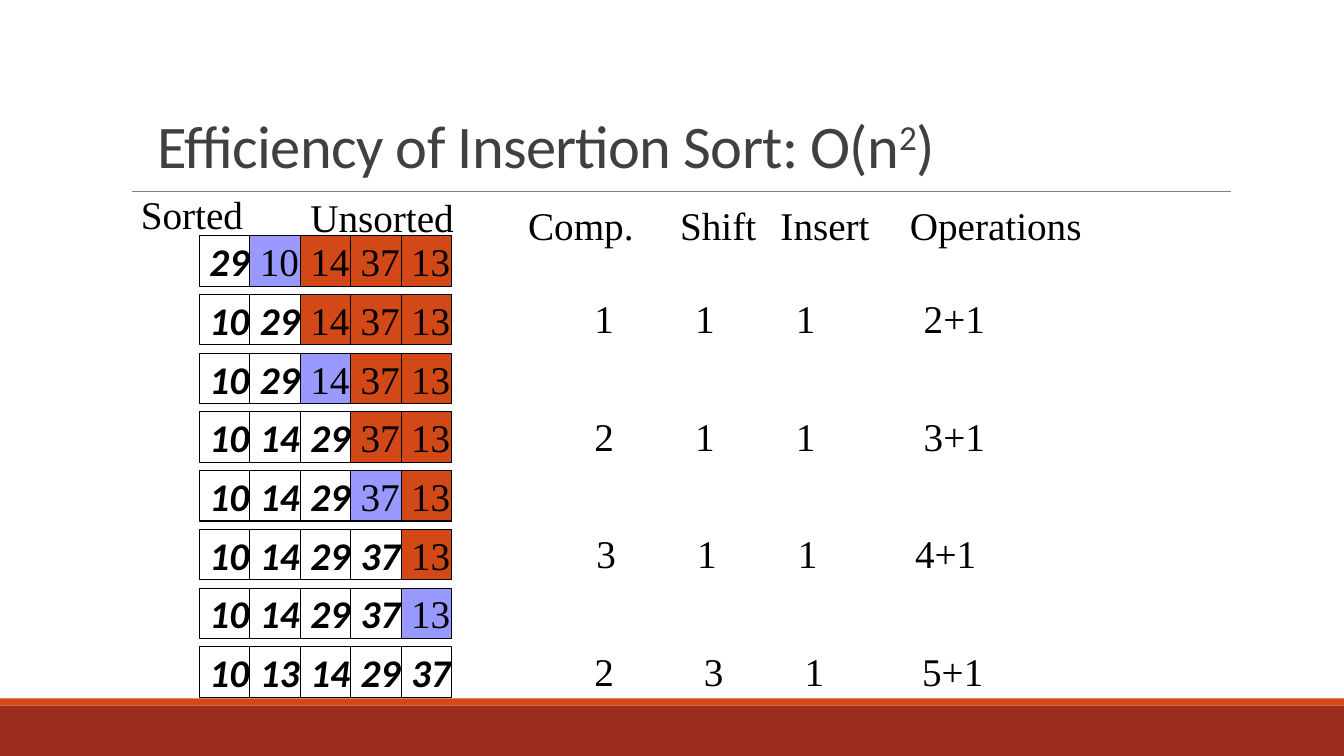
import pptx
import pptx.util
import pptx.dml.color
import pptx.enum.shapes
import pptx.enum.text
import pptx.oxml.ns
from lxml import etree

Cm = pptx.util.Cm
Pt = pptx.util.Pt
qn = pptx.oxml.ns.qn

COLORS = {
    "band": "9B2D1F",
    "unsorted": "D34817",
    "key": "9999FF",
    "sorted": "FFFFFF",
    "rule": "808080",
    "title": "404040",
    "text": "000000",
}
NUMBERS = [29, 10, 14, 37, 13]
CELL = 1.27
GRID_LEFT, GRID_TOP, ROW_PITCH = 5.03, 5.94, 1.48
LABELS = [
    ("Sorted", 3.3, 4.67, 3.1),
    ("Unsorted", 7.57, 4.75, 4.14),
]
COUNT_ROWS = [
    (["Comp.", "Shift", "Insert", "Operations"], 13.06, 4.95, 15, [3.83, 6.36, 9.62]),
    (["1", "1", "1", "2+1"], 14.73, 7.29, 11.68, [2.54, 5.08, 8.3]),
    (["2", "1", "1", "3+1"], 14.73, 10.26, 11.3, [2.54, 5.08, 8.3]),
    (["3", "1", "1", "4+1"], 14.78, 13.21, 11.03, [2.54, 5.08, 8.03]),
    (["2", "3", "1", "5+1"], 14.73, 16.18, 11.26, [2.76, 5.3, 8.26]),
]


def rgb(name):
    return pptx.dml.color.RGBColor.from_string(COLORS[name])


def style_run(r, size, font, color="text", strong=False):
    r.font.size = Pt(size)
    r.font.name = font
    r.font.color.rgb = rgb(color)
    r.font.bold = strong
    r.font.italic = strong


def add_rect(s, left, top, width, height, fill, outlined=False):
    sp = s.shapes.add_shape(pptx.enum.shapes.MSO_SHAPE.RECTANGLE,
                            Cm(left), Cm(top), Cm(width), Cm(height))
    sp.shadow.inherit = False
    sp.fill.solid()
    sp.fill.fore_color.rgb = rgb(fill)
    if outlined:
        sp.line.color.rgb = rgb("text")
        sp.line.width = Pt(0.75)
    else:
        sp.line.fill.background()
    return sp


def add_cell(s, row, col, value, state):
    sp = add_rect(s, GRID_LEFT + col * CELL, GRID_TOP + row * ROW_PITCH,
                  CELL, CELL, state, outlined=True)
    tf = sp.text_frame
    tf.word_wrap = False
    tf.vertical_anchor = pptx.enum.text.MSO_ANCHOR.MIDDLE
    tf.text = str(value)
    p = tf.paragraphs[0]
    p.alignment = pptx.enum.text.PP_ALIGN.LEFT
    done = state == "sorted"
    style_run(p.runs[0], 28, "Calibri" if done else "Times New Roman", strong=done)


def add_sort_steps(s):
    for row in range(2 * len(NUMBERS) - 2):
        done = 1 + (row + 1) // 2
        values = sorted(NUMBERS[:done]) + NUMBERS[done:]
        for col, value in enumerate(values):
            if col < done:
                state = "sorted"
            elif col == done and row % 2 == 0:
                state = "key"
            else:
                state = "unsorted"
            add_cell(s, row, col, value, state)


def add_label(s, text, left, top, width, tabs=()):
    sp = s.shapes.add_textbox(Cm(left), Cm(top), Cm(width), Cm(1.45))
    tf = sp.text_frame
    tf.word_wrap = False
    tf.auto_size = pptx.enum.text.MSO_AUTO_SIZE.SHAPE_TO_FIT_TEXT
    tf.text = text
    p = tf.paragraphs[0]
    p.alignment = pptx.enum.text.PP_ALIGN.LEFT
    for r in p.runs:
        style_run(r, 28, "Times New Roman")
    if tabs:
        tab_list = etree.SubElement(p._p.get_or_add_pPr(), qn("a:tabLst"))
        for pos in tabs:
            etree.SubElement(tab_list, qn("a:tab"), pos=str(Cm(pos)), algn="l")


def add_title(s):
    sp = s.shapes.add_textbox(Cm(3.73), Cm(1.5), Cm(21.59), Cm(3.18))
    tf = sp.text_frame
    tf.word_wrap = True
    tf.vertical_anchor = pptx.enum.text.MSO_ANCHOR.BOTTOM
    p = tf.paragraphs[0]
    p.line_spacing = 0.85
    for text, baseline in [("Efficiency of Insertion Sort: O(n", 0), ("2", 30000), (")", 0)]:
        r = p.add_run()
        r.text = text
        style_run(r, 43.2, "Calibri", "title")
        rPr = r._r.get_or_add_rPr()
        rPr.set("spc", "-50")
        rPr.set("baseline", str(baseline))


def add_rule(s):
    line = s.shapes.add_connector(pptx.enum.shapes.MSO_CONNECTOR.STRAIGHT,
                                  Cm(3.33), Cm(4.83), Cm(31.01), Cm(4.83))
    line.line.color.rgb = rgb("rule")
    line.line.width = Pt(0.5)
    etree.SubElement(line._element.spPr, qn("a:effectLst"))


def main():
    prs = pptx.Presentation()
    prs.slide_width = Cm(33.87)
    prs.slide_height = Cm(19.05)
    s = prs.slides.add_slide(prs.slide_layouts[6])
    add_rect(s, 0, 17.78, 33.87, 1.27, "band")
    add_rect(s, 0, 17.6, 33.87, 0.18, "unsorted")
    add_rule(s)
    add_title(s)
    add_sort_steps(s)
    for text, left, top, width in LABELS:
        add_label(s, text, left, top, width)
    for values, left, top, width, tabs in COUNT_ROWS:
        add_label(s, "\t".join(values), left, top, width, tabs)
    prs.save("out.pptx")


if __name__ == "__main__":
    main()
